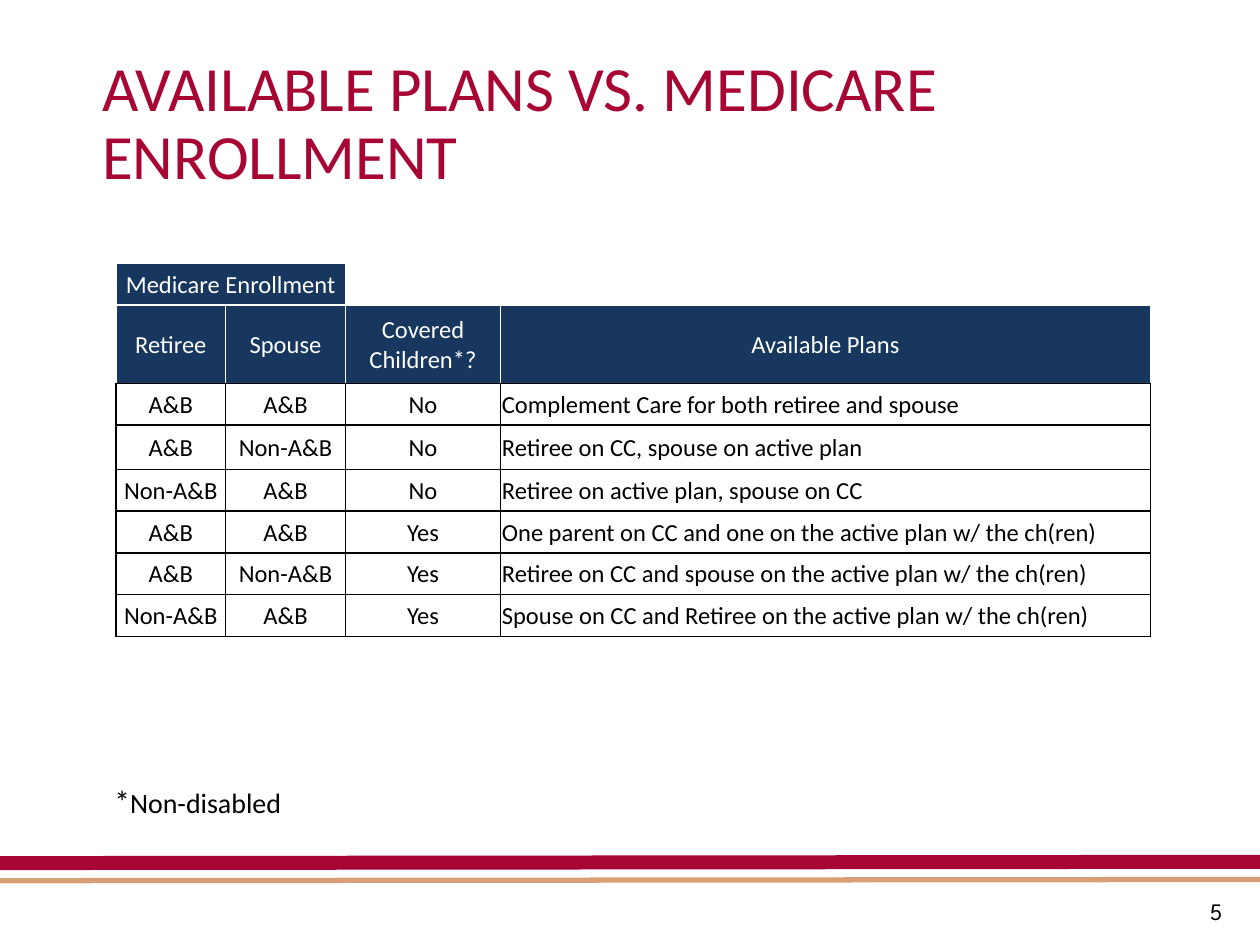
from dataclasses import dataclass

from lxml.etree import SubElement
from pptx import Presentation
from pptx.dml.color import RGBColor
from pptx.enum.shapes import MSO_CONNECTOR
from pptx.enum.text import MSO_ANCHOR, PP_ALIGN
from pptx.oxml.ns import qn
from pptx.util import Inches, Pt


@dataclass(frozen=True)
class Theme:
    crimson: str = "A70533"
    sand: str = "D89F74"
    navy: str = "17375E"
    white: str = "FFFFFF"
    black: str = "000000"
    text_font: str = "Calibri"
    number_font: str = "League Spartan"
    title_size: float = 36
    table_size: float = 14
    star_size: float = 18
    note_size: float = 16
    number_size: float = 13.5


THEME = Theme()
COLUMNS = (0.87, 0.95, 1.23, 5.15)
ROWS = (0.33, 0.62, 0.33, 0.35, 0.33, 0.33, 0.33, 0.33)
PLANS = (
    ("Medicare Enrollment", "", "", ""),
    ("Retiree", "Spouse", "Covered Children*?", "Available Plans"),
    ("A&B", "A&B", "No", "Complement Care for both retiree and spouse"),
    ("A&B", "Non-A&B", "No", "Retiree on CC, spouse on active plan"),
    ("Non-A&B", "A&B", "No", "Retiree on active plan, spouse on CC"),
    ("A&B", "A&B", "Yes", "One parent on CC and one on the active plan w/ the ch(ren)"),
    ("A&B", "Non-A&B", "Yes", "Retiree on CC and spouse on the active plan w/ the ch(ren)"),
    ("Non-A&B", "A&B", "Yes", "Spouse on CC and Retiree on the active plan w/ the ch(ren)"),
)


def set_all(target, formats):
    for name, value in formats.items():
        setattr(target, name, value)


def style_font(font, size, color=THEME.black, name=THEME.text_font):
    set_all(font, {"size": Pt(size), "name": name})
    font.color.rgb = RGBColor.from_string(color)


def add_title(slide, box, wording):
    title = slide.shapes.title
    set_all(title, dict(zip(("left", "top", "width", "height"), map(Inches, box))))
    title.text_frame.text = wording
    set_all(title.text_frame, {"vertical_anchor": MSO_ANCHOR.TOP, "word_wrap": True})
    heading = title.text_frame.paragraphs[0]
    set_all(heading, {"alignment": PP_ALIGN.LEFT, "line_spacing": 0.9})
    style_font(heading.runs[0].font, THEME.title_size, THEME.crimson)


def add_text(slide, box, pieces, alignment, font_name=THEME.text_font):
    frame = slide.shapes.add_textbox(*map(Inches, box)).text_frame
    frame.word_wrap = True
    line = frame.paragraphs[0]
    line.alignment = alignment
    for wording, size in pieces:
        piece = line.add_run()
        piece.text = wording
        style_font(piece.font, size, name=font_name)


def add_stripe(slide, box, color, weight):
    left, top, width, rise = box
    stripe = slide.shapes.add_connector(
        MSO_CONNECTOR.STRAIGHT,
        *map(Inches, (left, top + rise, left + width, top)))
    stripe.line.width = Pt(weight)
    stripe.line.color.rgb = RGBColor.from_string(color)
    SubElement(stripe._element.spPr, qn("a:effectLst"))


def add_borders(cell, colors):
    properties = cell._tc.get_or_add_tcPr()
    for side, color in zip("LRTB", colors):
        edge = SubElement(properties, qn(f"a:ln{side}"), w=str(Pt(1)))
        fill = SubElement(edge, qn("a:solidFill"))
        SubElement(fill, qn("a:srgbClr"), val=color)


def format_cell(cell, row, column, wording):
    heading = row < 2
    edge = THEME.white if heading else THEME.black
    bottom = THEME.white if row == 0 else THEME.black
    add_borders(cell, (edge, edge, edge, bottom))
    if row == 0 and column > 1:
        cell.fill.background()
    else:
        cell.fill.solid()
        cell.fill.fore_color.rgb = RGBColor.from_string(
            THEME.navy if heading else THEME.white)
    margin = Inches(0.01)
    set_all(cell, {
        "vertical_anchor": MSO_ANCHOR.MIDDLE, "margin_left": margin,
        "margin_right": margin, "margin_top": margin, "margin_bottom": 0,
    })
    cell.text = wording
    entry = cell.text_frame.paragraphs[0]
    entry.alignment = PP_ALIGN.CENTER if heading or column < 3 else PP_ALIGN.LEFT
    style_font(entry.font, THEME.table_size, THEME.white if heading else THEME.black)


def add_plans(slide, box):
    table = slide.shapes.add_table(len(ROWS), len(COLUMNS), *map(Inches, box)).table
    set_all(table, {"first_row": False, "horz_banding": False})
    for column, share in zip(table.columns, COLUMNS):
        column.width = Inches(box[2] * share / sum(COLUMNS))
    for row, share in zip(table.rows, ROWS):
        row.height = Inches(box[3] * share / sum(ROWS))
    for row, entries in enumerate(PLANS):
        for column, wording in enumerate(entries):
            format_cell(table.cell(row, column), row, column, wording)
    table.cell(0, 0).merge(table.cell(0, 1))


def build_slide(deck):
    slide = deck.slides.add_slide(deck.slide_layouts[5])
    add_stripe(slide, (0, 6.84, 10, 0.01), THEME.crimson, 8)
    add_stripe(slide, (0, 6.98, 10, 0.01), THEME.sand, 3)
    add_text(slide, (8.76, 7.07, 1.04, 0.33), [("5", THEME.number_size)],
             PP_ALIGN.RIGHT, THEME.number_font)
    add_title(slide, (0.71, 0.4, 8.62, 1.45), "AVAILABLE PLANS VS. MEDICARE ENROLLMENT")
    add_plans(slide, (0.92, 2.09, 8.21, 2.96))
    add_text(slide, (0.81, 6.16, 3.05, 0.4),
             [("*", THEME.star_size), ("Non-disabled", THEME.note_size)], PP_ALIGN.LEFT)


def main():
    deck = Presentation()
    set_all(deck, {"slide_width": Inches(10), "slide_height": Inches(7.5)})
    build_slide(deck)
    deck.save("out.pptx")


if __name__ == "__main__":
    main()
